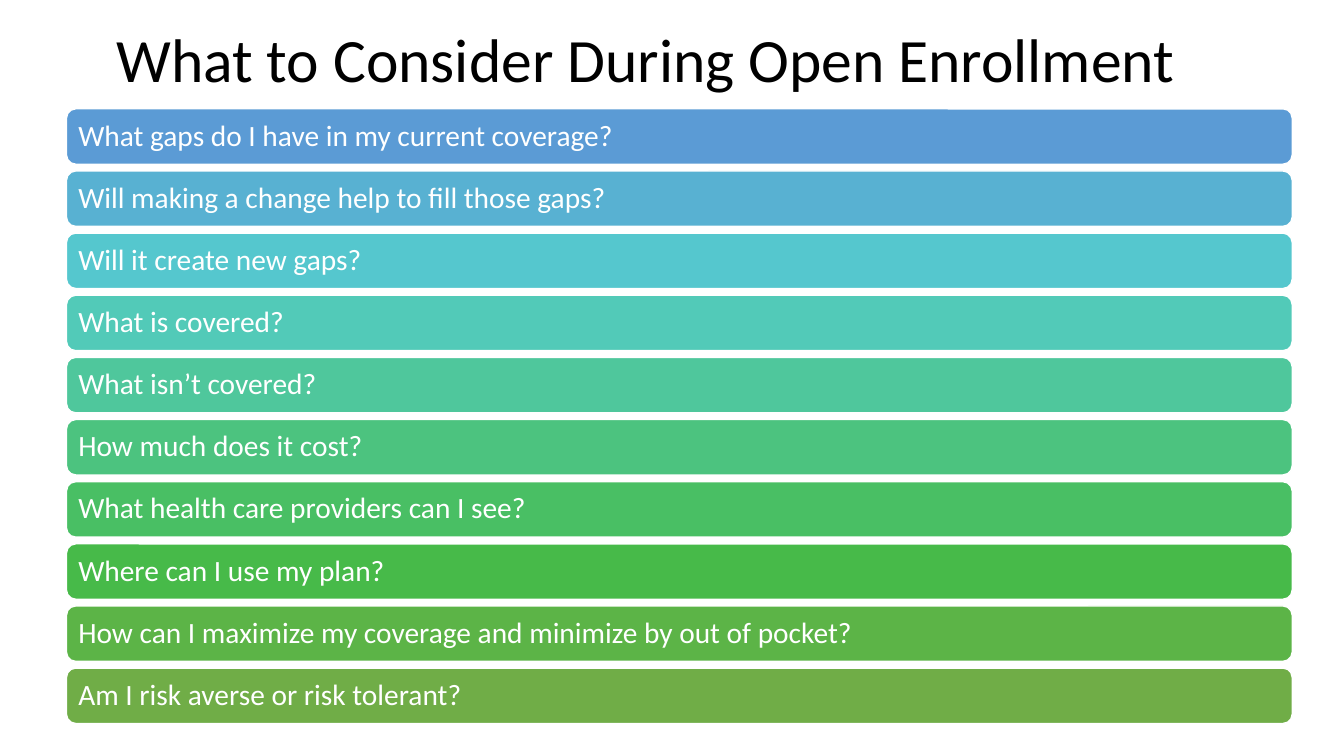
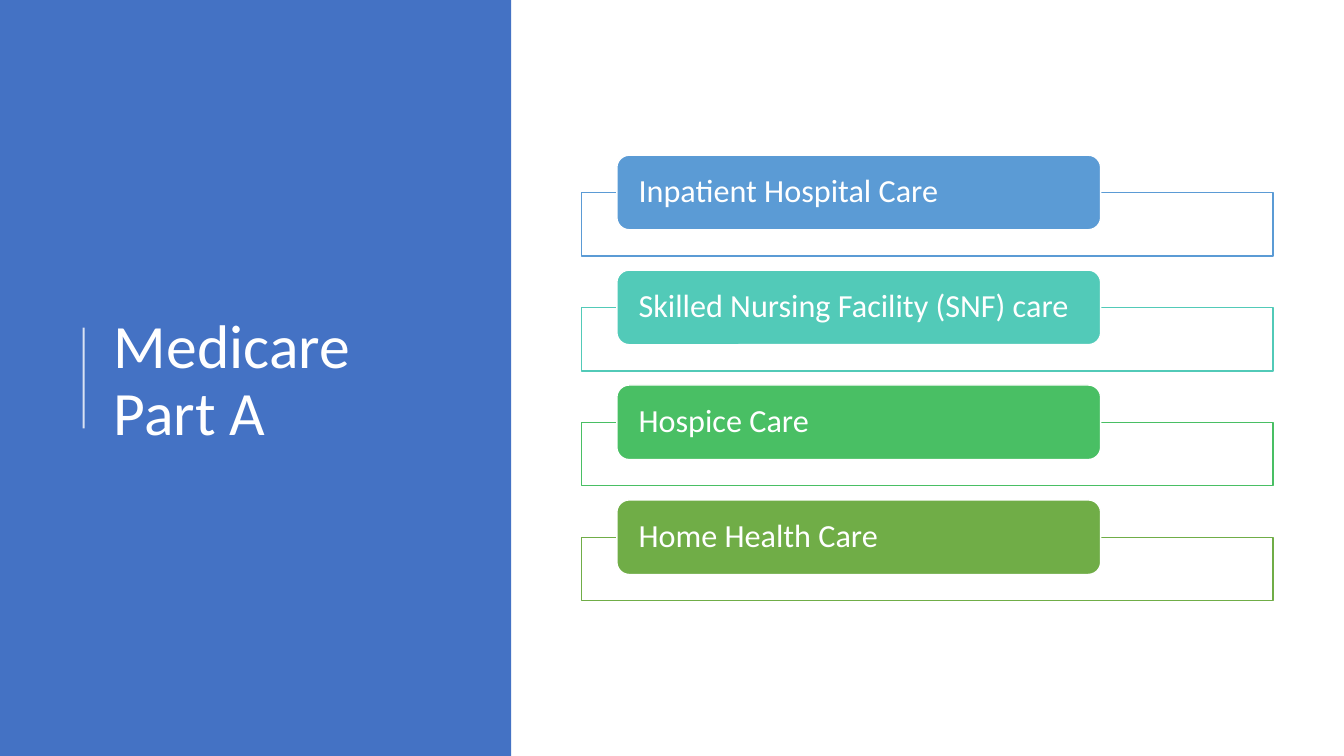
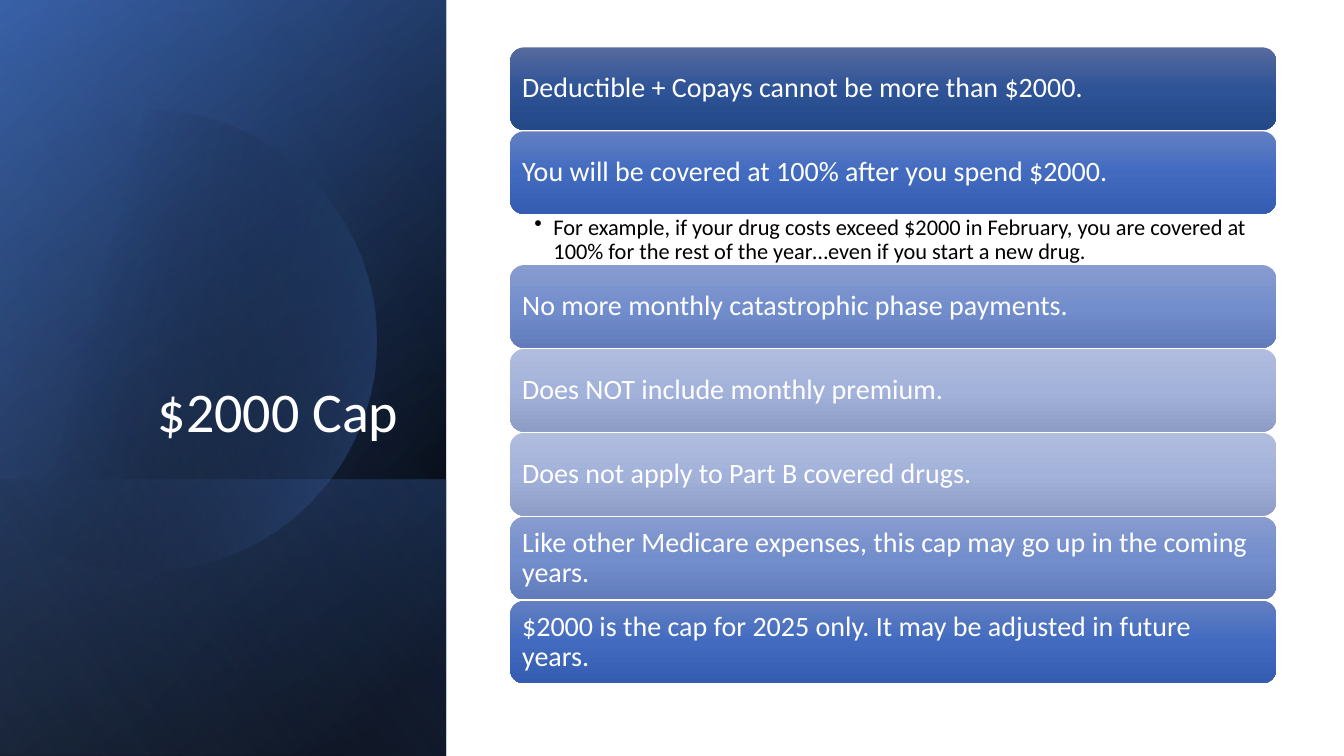
from math import acos, cos, sin

from lxml import etree
from pptx import Presentation
from pptx.dml.color import RGBColor
from pptx.enum.shapes import MSO_CONNECTOR, MSO_SHAPE
from pptx.enum.text import MSO_ANCHOR, PP_ALIGN
from pptx.oxml.ns import qn
from pptx.util import Inches, Pt

RECT, ROUNDED = MSO_SHAPE.RECTANGLE, MSO_SHAPE.ROUNDED_RECTANGLE
STRAIGHT = MSO_CONNECTOR.STRAIGHT
TOP, MIDDLE, BOTTOM = MSO_ANCHOR.TOP, MSO_ANCHOR.MIDDLE, MSO_ANCHOR.BOTTOM
LEFT, CENTER, RIGHT = PP_ALIGN.LEFT, PP_ALIGN.CENTER, PP_ALIGN.RIGHT

FONT = "Calibri"
WHITE, BLACK, BLUE, NAVY, PALE_BLUE = "FFFFFF", "000000", "4472C4", "2F5597", "8FAADC"
SCALE = ["5B9BD5", "58B1D2", "55C7CE", "52CAB8", "4FC79C",
         "4CC37F", "49BF64", "47BA49", "5CB447", "70AD47"]
DEEP = [(0, "566B9E"), (50, "2E5396"), (100, "244989")]
STRONG = [(0, "637FC2"), (50, "426BC0"), (100, "345DB1")]
SOFT = [(0, "889CCF"), (50, "738ECD"), (100, "627CBB")]
FAINT = [(0, "B1BDDE"), (50, "A3B2DB"), (100, "8E9DC6")]

QUESTIONS = [
    "What gaps do I have in my current coverage?",
    "Will making a change help to fill those gaps?",
    "Will it create new gaps?",
    "What is covered?",
    "What isn’t covered?",
    "How much does it cost?",
    "What health care providers can I see?",
    "Where can I use my plan?",
    "How can I maximize my coverage and minimize by out of pocket?",
    "Am I risk averse or risk tolerant?",
]
PART_A = ["Inpatient Hospital Care", "Skilled Nursing Facility (SNF) care",
          "Hospice Care", "Home Health Care"]
CAP_RULES = [
    ("Deductible + Copays cannot be more than $2000.", DEEP),
    ("You will be covered at 100% after you spend $2000.", STRONG),
    ("No more monthly catastrophic phase payments.", SOFT),
    ("Does NOT include monthly premium.", FAINT),
    ("Does not apply to Part B covered drugs.", FAINT),
    ("Like other Medicare expenses, this cap may go up in the coming years.", SOFT),
    ("$2000 is the cap for 2025 only. It may be adjusted in future years.", STRONG),
]
EXAMPLE = ("For example, if your drug costs exceed $2000 in February, you are covered "
           "at 100% for the rest of the year…even if you start a new drug.")


def color(hex_code):
    return RGBColor.from_string(hex_code)


def fade(item, opacity):
    """Set the opacity, in percent, of the first colour of a shape or line."""
    first = item._element.spPr.find(".//" + qn("a:srgbClr"))
    etree.SubElement(first, qn("a:alpha"), val=str(opacity * 1000))


class Deck:
    """Boxes are left, top, width, height in percent of the slide's size."""

    def __init__(self):
        self.prs = Presentation()
        self.prs.slide_width, self.prs.slide_height = Inches(13.333), Inches(7.5)

    def new_slide(self):
        self.shapes = self.prs.slides.add_slide(self.prs.slide_layouts[6]).shapes

    def x(self, share):
        return round(self.prs.slide_width * share / 100)

    def y(self, share):
        return round(self.prs.slide_height * share / 100)

    def place(self, box):
        left, top, width, height = box
        return self.x(left), self.y(top), self.x(width), self.y(height)

    def paint(self, shape, fill, line=None, angle=90):
        """Fill with one colour, or with (position, colour[, opacity]) stops."""
        shape.shadow.inherit = False
        if isinstance(fill, str):
            shape.fill.solid()
            shape.fill.fore_color.rgb = color(fill)
        else:
            shape.fill.gradient()
            shape.fill.gradient_angle = 360 - angle
            stops = shape._element.spPr.find(".//" + qn("a:gsLst"))
            for default in list(stops):
                stops.remove(default)
            for position, hex_code, *opacity in fill:
                stop = etree.SubElement(stops, qn("a:gs"), pos=str(position * 1000))
                tint = etree.SubElement(stop, qn("a:srgbClr"), val=hex_code)
                if opacity:
                    etree.SubElement(tint, qn("a:alpha"), val=str(opacity[0] * 1000))
        if line:
            shape.line.color.rgb = color(line)
            shape.line.width = Pt(1)
        else:
            shape.line.fill.background()

    def set_text(self, shape, text, size, ink=WHITE, align=LEFT, anchor=MIDDLE,
                 insets=(0.1, 0.05, 0.1, 0.05)):
        frame = shape.text_frame
        frame.text = text
        frame.word_wrap = True
        frame.vertical_anchor = anchor
        (frame.margin_left, frame.margin_top,
         frame.margin_right, frame.margin_bottom) = map(Inches, insets)
        paragraph = frame.paragraphs[0]
        paragraph.alignment = align
        paragraph.line_spacing = 0.9
        for run in paragraph.runs:
            run.font.name, run.font.size = FONT, Pt(size)
            run.font.color.rgb = color(ink)
        return paragraph

    def block(self, box, fill, line=None, kind=RECT):
        shape = self.shapes.add_shape(kind, *self.place(box))
        self.paint(shape, fill, line)
        return shape

    def bar(self, box, text, size, fill, line=None, insets=(0.09,) * 4):
        self.set_text(self.block(box, fill, line, ROUNDED), text, size, insets=insets)

    def title(self, box, text, size=44, **style):
        self.set_text(self.shapes.add_textbox(*self.place(box)), text, size, **style)

    def bullet(self, box, text):
        note = self.shapes.add_textbox(*self.place(box))
        paragraph = self.set_text(note, text, 16, BLACK, anchor=TOP,
                                  insets=(0.24, 0.02, 0.12, 0.02))
        props = paragraph._p.get_or_add_pPr()
        props.set("marL", str(Inches(0.19)))
        props.set("indent", str(-Inches(0.19)))
        etree.SubElement(props, qn("a:buChar"), char="•")

    def rule(self, x, bottom, top):
        line = self.shapes.add_connector(STRAIGHT, self.x(x), self.y(bottom),
                                         self.x(x), self.y(top))
        line.line.color.rgb = color(WHITE)
        line.line.width = Pt(1.5)
        fade(line, 80)
        etree.SubElement(line._element.spPr, qn("a:effectLst"))

    def turned_panel(self, box, stops, angle):
        """Cover the box with a mirrored rectangle turned by 90 degrees."""
        left, top, width, height = self.place(box)
        shift = (width - height) // 2
        panel = self.shapes.add_shape(RECT, left + shift, top - shift, height, width)
        panel.rotation = 90
        panel._element.spPr.find(qn("a:xfrm")).set("flipH", "1")
        self.paint(panel, stops, angle=angle)

    def cut_disc(self, center_x, center_y, radius, stops, angle, steps=120):
        """Draw a disc, given in inches, cut off at the slide's left edge."""
        reach = acos(-center_x / radius)
        turns = [reach * (2 * i / steps - 1) for i in range(steps + 1)]
        points = [(Inches(center_x + radius * cos(t)), Inches(center_y + radius * sin(t)))
                  for t in turns]
        outline = self.shapes.build_freeform(*points[0])
        outline.add_line_segments(points[1:])
        self.paint(outline.convert_to_shape(), stops, angle=angle)


def enrollment_slide(deck):
    deck.new_slide()
    deck.title((4.95, 0, 86.25, 16.53), "What to Consider During Open Enrollment",
               ink=BLACK, align=CENTER)
    for row, (question, fill) in enumerate(zip(QUESTIONS, SCALE)):
        deck.bar((4.95, 14.4 + 8.22 * row, 91.2, 7.33), question, 21, fill, WHITE)


def part_a_slide(deck):
    deck.new_slide()
    deck.block((0, 0, 38.03, 100), BLUE)
    deck.title((7.73, 10.4, 27.68, 80.27), "Medicare \vPart A")
    deck.rule(6.23, 56.67, 43.33)
    for row, (care, hue) in enumerate(zip(PART_A, SCALE[::3])):
        offset = 15.2 * row
        frame = deck.block((43.28, 25.47 + offset, 51.45, 8.4), WHITE, hue)
        fade(frame, 90)
        deck.bar((45.9, 20.53 + offset, 36, 9.87), care, 23, hue, WHITE,
                 insets=(0.18, 0, 0.18, 0))


def cap_slide(deck):
    deck.new_slide()
    side = (0, 0, 33.18, 100)
    deck.turned_panel(side, [(8, BLACK), (100, NAVY)], 50)
    deck.turned_panel(side, [(0, BLACK, 0), (99, BLUE, 46)], 30)
    deck.turned_panel((0, 63.47, 33.18, 36.53), [(2, BLUE, 29), (100, BLACK, 30)], 130)
    deck.cut_disc(1.44, 3.38, 2.29, [(29, BLACK, 0), (100, BLUE, 43)], 14)
    deck.turned_panel(side, [(0, BLACK, 0), (99, PALE_BLUE, 11)], 120)
    deck.title((1.88, 24.53, 28.5, 34.93), "$2000 Cap", 40, align=RIGHT, anchor=BOTTOM)

    left, width, top = 37.96, 57, 6.27
    for row, (statement, fill) in enumerate(CAP_RULES):
        if row == 2:
            deck.bullet((left, top - 0.17, width, 6.8), EXAMPLE)
            top += 6.6
        deck.bar((left, top, width, 10.93), statement, 20, fill, insets=(0.08,) * 4)
        top += 11.1


def main():
    deck = Deck()
    enrollment_slide(deck)
    part_a_slide(deck)
    cap_slide(deck)
    deck.prs.save("out.pptx")


if __name__ == "__main__":
    main()
